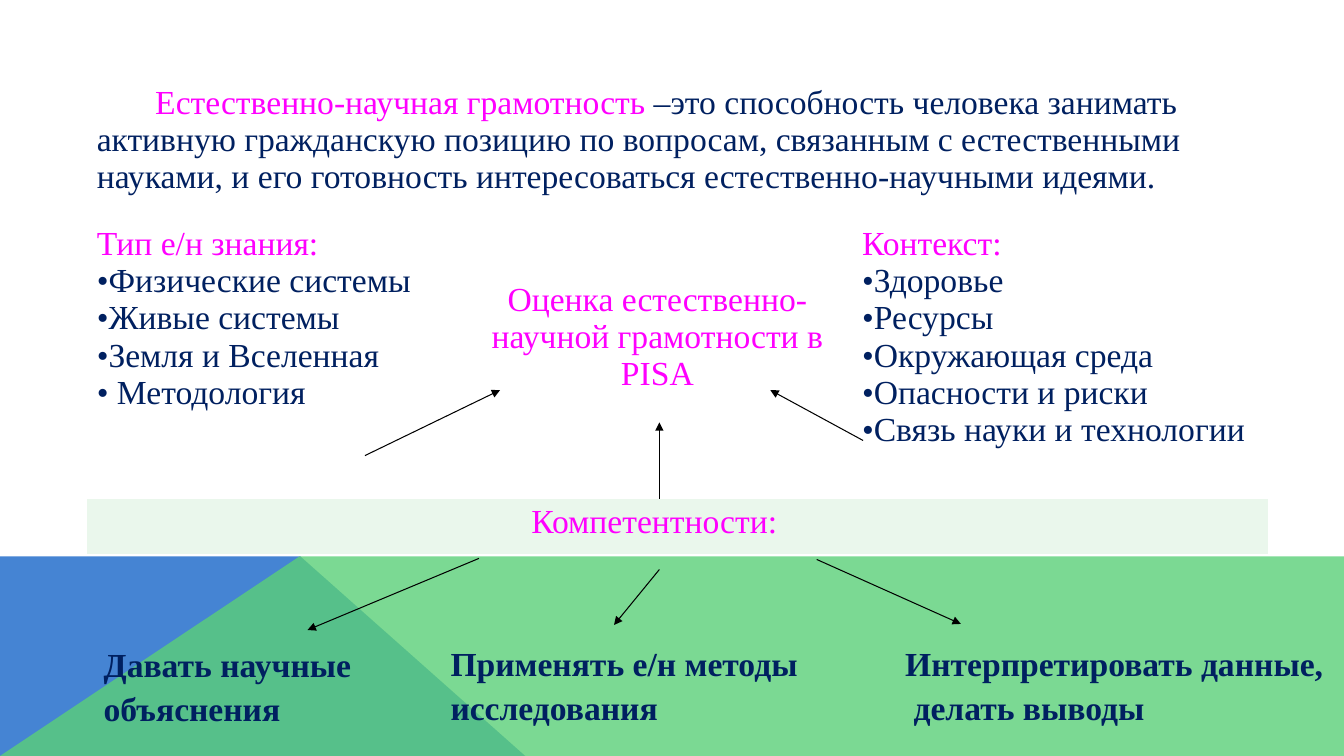
from dataclasses import dataclass

from lxml.etree import SubElement
from pptx import Presentation
from pptx.dml.color import RGBColor as RGB
from pptx.enum.shapes import MSO_CONNECTOR as Conn
from pptx.enum.text import PP_ALIGN as Align
from pptx.oxml.ns import qn
from pptx.util import Inches, Pt


@dataclass(frozen=True)
class Theme:
    """Colours and type of the slide."""
    font: str = "Times New Roman"
    size: int = 24
    navy: str = "002060"
    pink: str = "FF00FF"
    blue: str = "4584D3"
    green: str = "5BD078"
    pale: str = "EAF7EC"
    black: str = "000000"


THEME = Theme()
PLAIN = "{2D5ABB26-0587-4C30-8999-92F81FD0307C}"
TERM = "Естественно-научная грамотность "
MEANING = ("–это способность человека занимать активную гражданскую позицию "
           "по вопросам, связанным с естественными науками, и его готовность "
           "интересоваться естественно-научными идеями.")
KINDS = ["Тип е/н знания:", "•Физические системы", "•Живые системы",
         "•Земля и Вселенная", "• Методология"]
FIELDS = ["Контекст:", "•Здоровье", "•Ресурсы", "•Окружающая среда",
          "•Опасности и риски", "•Связь науки и технологии"]
SKILLS = [
    (0.93, 6.31, 3.82, ["Давать научные объяснения"]),
    (8.88, 6.3, 4.37, ["Интерпретировать данные,", " делать выводы"]),
    (4.37, 6.3, 4.7, ["Применять е/н методы исследования"]),
]
ARROWS = [
    (3.62, 4.52, 4.96, 3.87), (8.56, 4.37, 7.64, 3.87),
    (6.54, 4.95, 6.54, 4.19), (8.1, 5.55, 9.53, 6.19),
    (4.75, 5.54, 3.05, 6.25), (6.54, 5.65, 6.09, 6.2),
]


def style(run, color, bold=False):
    """Format one run of text."""
    font = run.font
    font.name, font.size, font.bold = THEME.font, Pt(THEME.size), bold
    font.color.rgb = RGB.from_string(color)


def write(frame, lines, color, bold=False):
    """Fill a text frame with one paragraph per line."""
    frame.text = "\n".join(lines)
    for para in frame.paragraphs:
        for run in para.runs:
            style(run, color, bold)


def indent(para, width):
    """Indent the first line of a paragraph."""
    para._p.get_or_add_pPr().set("indent", str(Inches(width)))


def add_area(slide, points, color, alpha=100):
    """Draw a filled polygon."""
    start, *rest = [(Inches(x), Inches(y)) for x, y in points]
    form = slide.shapes.build_freeform(*start)
    form.add_line_segments(rest, close=True)
    area = form.convert_to_shape()
    area.shadow.inherit = False
    area.line.fill.background()
    area.fill.solid()
    area.fill.fore_color.rgb = RGB.from_string(color)
    if alpha < 100:
        tone = area._element.spPr.find(".//" + qn("a:srgbClr"))
        SubElement(tone, qn("a:alpha")).set("val", str(alpha * 1000))


def add_arrow(slide, ends):
    """Draw a thin arrow from the first point to the second."""
    line = slide.shapes.add_connector(Conn.STRAIGHT, *map(Inches, ends))
    line.line.color.rgb = RGB.from_string(THEME.black)
    line.line.width = Pt(0.75)
    SubElement(line.line._get_or_add_ln(), qn("a:tailEnd")).set("type", "triangle")
    SubElement(line._element.spPr, qn("a:effectLst"))


def add_skill(slide, left, top, width, lines):
    """Add a bold text box for one skill."""
    box = slide.shapes.add_textbox(*map(Inches, (left, top, width, 0.91)))
    box.text_frame.word_wrap = True
    write(box.text_frame, lines, THEME.navy, True)
    for para in box.text_frame.paragraphs:
        para.line_spacing = 1.08


def add_grid(slide):
    """Add the plain three-column table without text."""
    frame = slide.shapes.add_table(3, 3, *map(Inches, (0.86, 0.42, 11.72, 5.08)))
    table = frame.table
    table.first_row = table.horz_banding = False
    table._tbl.tblPr.find(qn("a:tableStyleId")).text = PLAIN
    for col, width in zip(table.columns, (3.73, 3.86, 4.13)):
        col.width = Inches(width)
    for row, height in zip(table.rows, (1.77, 2.76, 0.55)):
        row.height = Inches(height)
    for cell in table.iter_cells():
        cell.fill.background()
    for col in range(3):
        fill = table.cell(2, col).fill
        fill.solid()
        fill.fore_color.rgb = RGB.from_string(THEME.pale)
    table.cell(0, 0).merge(table.cell(0, 2))
    return table


def fill_grid(table):
    """Write the definition, the lists and the headings."""
    top = table.cell(0, 0)
    top.margin_top = Inches(0.42)
    write(top.text_frame, [TERM], THEME.pink)
    para = top.text_frame.paragraphs[0]
    indent(para, 0.58)
    run = para.add_run()
    run.text = MEANING
    style(run, THEME.navy)

    for col, lines in ((0, KINDS), (2, FIELDS)):
        frame = table.cell(1, col).text_frame
        write(frame, lines, THEME.navy)
        style(frame.paragraphs[0].runs[0], THEME.pink)

    core = table.cell(1, 1)
    core.margin_top = Inches(0.6)
    write(core.text_frame, ["Оценка естественно-научной грамотности в PISA"], THEME.pink)
    core.text_frame.paragraphs[0].alignment = Align.CENTER

    head = table.cell(2, 1).text_frame
    write(head, ["Компетентности:"], THEME.pink)
    indent(head.paragraphs[0], 0.58)


def main():
    """Build and save the slide."""
    deck = Presentation()
    deck.slide_width, deck.slide_height = Inches(13.33), Inches(7.5)
    slide = deck.slides.add_slide(deck.slide_layouts[6])
    add_area(slide, [(0, 7.5), (0, 5.52), (2.98, 5.52), (5.21, 7.5)], THEME.blue)
    add_area(slide, [(0, 7.5), (2.97, 5.52), (13.33, 5.52), (13.33, 7.5)],
             THEME.green, 80)
    fill_grid(add_grid(slide))
    for skill in SKILLS:
        add_skill(slide, *skill)
    for ends in ARROWS:
        add_arrow(slide, ends)
    deck.save("out.pptx")


if __name__ == "__main__":
    main()
